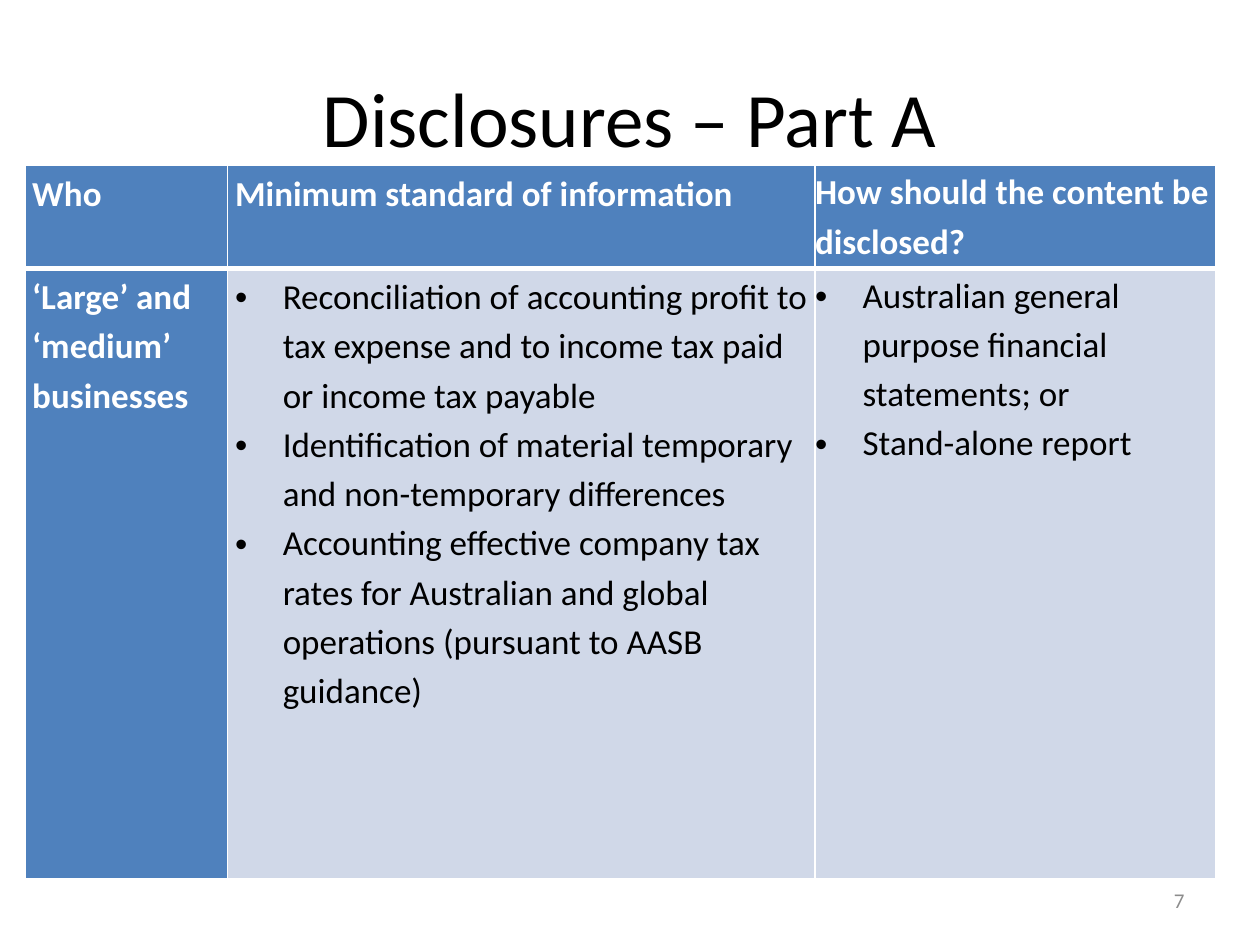
from lxml.etree import SubElement
from pptx import Presentation
from pptx.dml.color import RGBColor
from pptx.enum.text import MSO_ANCHOR as ANCHOR, PP_ALIGN as ALIGN
from pptx.oxml.ns import qn
from pptx.util import Cm, Pt

COLORS = {"text": "000000", "light": "FFFFFF", "header": "4F81BD",
          "body": "D0D8E8", "number": "8C8C8C"}
FONT = "Calibri"
COL_WIDTHS = [4.09, 11.84, 8.07]
ROW_HEIGHTS = [2.08, 12.3]
ROWS = [
    [["Who"], ["Minimum standard of information"],
     ["How should the content be disclosed?"]],
    [["‘Large’ and ‘medium’ businesses"],
     ["Reconciliation of accounting profit to tax expense and to income tax "
      "paid or income tax payable",
      "Identification of material temporary and non-temporary differences",
      "Accounting effective company tax rates for Australian and global "
      "operations (pursuant to AASB guidance)"],
     ["Australian general purpose financial statements; or",
      "Stand-alone report"]],
]


def rgb(name):
    return RGBColor.from_string(COLORS[name])


def add_bullet(p, indent=Cm(0.96)):
    pPr = p._p.get_or_add_pPr()
    pPr.set("marL", str(indent))
    pPr.set("indent", str(-indent))
    SubElement(pPr, qn("a:buFont"), typeface="Arial")
    SubElement(pPr, qn("a:buChar"), char="•")


def write(tf, lines, size, color="text", bold=False, align=ALIGN.LEFT,
          spacing=None, bullets=False):
    """Fill a text frame with one paragraph per line."""
    tf.word_wrap = True
    for i, line in enumerate(lines):
        p = tf.paragraphs[0] if i == 0 else tf.add_paragraph()
        p.alignment = align
        if spacing:
            p.line_spacing = spacing
        if bullets:
            add_bullet(p)
        r = p.add_run()
        r.text = line
        r.font.name, r.font.size, r.font.bold = FONT, Pt(size), bold
        r.font.color.rgb = rgb(color)


def set_borders(cell, bottom):
    """Draw white cell borders; must run before the cell gets its fill."""
    tcPr = cell._tc.get_or_add_tcPr()
    for side, width in (("L", 1), ("R", 1), ("T", 1), ("B", bottom)):
        ln = SubElement(tcPr, qn(f"a:ln{side}"), w=str(Pt(width)))
        fill = SubElement(ln, qn("a:solidFill"))
        SubElement(fill, qn("a:srgbClr"), val=COLORS["light"])


def add_title(slide, text):
    title = slide.shapes.title
    title.left, title.top = Cm(1.27), Cm(0.76)
    title.width, title.height = Cm(22.86), Cm(3.18)
    title.text_frame.vertical_anchor = ANCHOR.MIDDLE
    write(title.text_frame, [text], 44, align=ALIGN.CENTER)


def add_disclosure_table(slide):
    table = slide.shapes.add_table(
        len(ROWS), len(COL_WIDTHS), Cm(0.5), Cm(3.33),
        Cm(sum(COL_WIDTHS)), Cm(sum(ROW_HEIGHTS))).table
    for column, width in zip(table.columns, COL_WIDTHS):
        column.width = Cm(width)
    for i, (row, height) in enumerate(zip(ROWS, ROW_HEIGHTS)):
        table.rows[i].height = Cm(height)
        for j, lines in enumerate(row):
            cell = table.cell(i, j)
            is_heading = i == 0 or j == 0
            is_last = j == len(row) - 1
            cell.margin_left = cell.margin_right = Cm(0 if is_last else 0.15)
            cell.margin_top = Cm(0 if is_last else 0.03)
            cell.margin_bottom = 0
            set_borders(cell, bottom=3 if i == 0 else 1)
            cell.fill.solid()
            cell.fill.fore_color.rgb = rgb("header" if is_heading else "body")
            write(cell.text_frame, lines, 20, bold=is_heading, spacing=1.15,
                  color="light" if is_heading else "text",
                  bullets=not is_heading)


def add_slide_number(slide, number):
    box = slide.shapes.add_textbox(Cm(18.2), Cm(17.65), Cm(5.93), Cm(1.01))
    box.text_frame.vertical_anchor = ANCHOR.MIDDLE
    write(box.text_frame, [number], 12, color="number", align=ALIGN.RIGHT)


def main():
    prs = Presentation()
    prs.slide_width, prs.slide_height = Cm(25.4), Cm(19.05)
    slide = prs.slides.add_slide(prs.slide_layouts[5])
    add_title(slide, "Disclosures – Part A")
    add_disclosure_table(slide)
    add_slide_number(slide, "7")
    prs.save("out.pptx")


if __name__ == "__main__":
    main()
